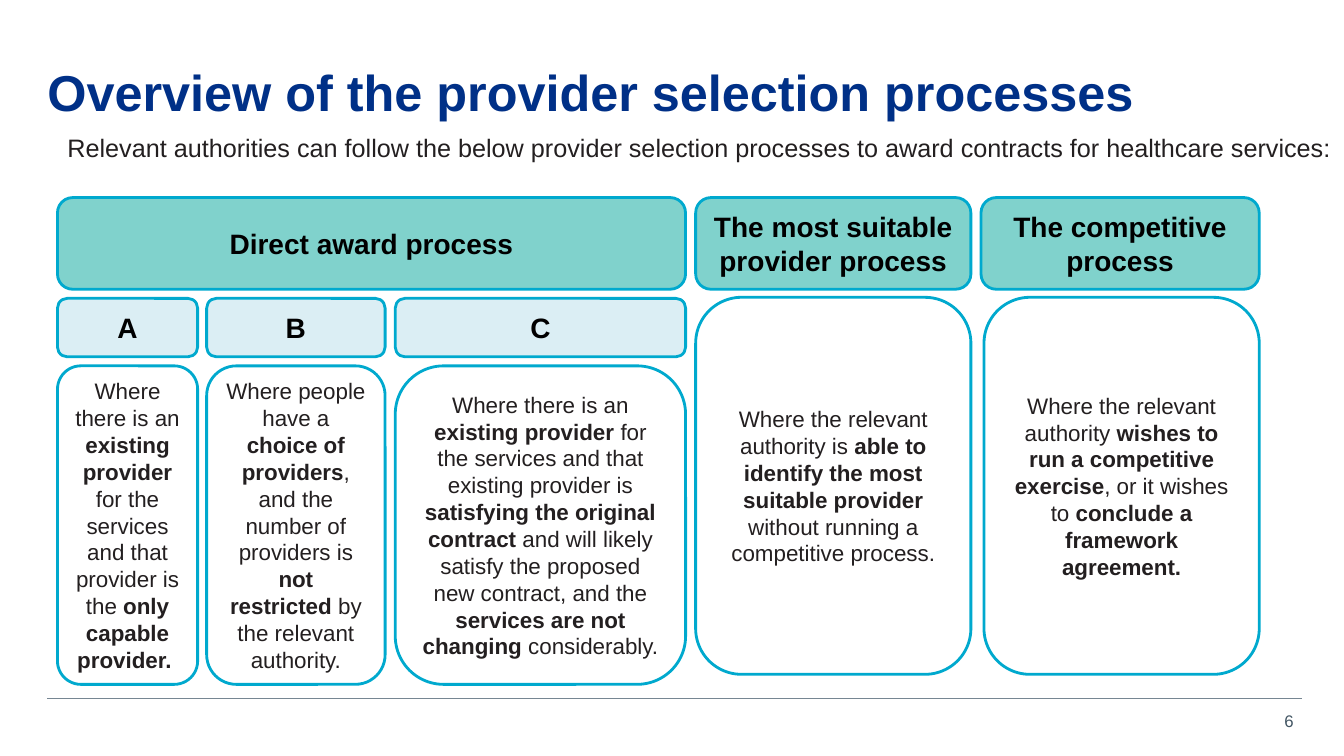
from lxml.etree import SubElement
from pptx import Presentation
from pptx.dml.color import RGBColor
from pptx.enum.shapes import MSO_CONNECTOR, MSO_SHAPE
from pptx.enum.text import MSO_ANCHOR, PP_ALIGN
from pptx.oxml.ns import qn
from pptx.util import Pt

PX = 9144  # 100 px to the inch
COLORS = {
    "title": "003087", "body": "231F20", "heading": "000000", "number": "425563",
    "rule": "768692", "outline": "00A9CE", "process": "80D2CC", "option": "DBEEF4",
    "panel": "FFFFFF",
}


def rgb(name):
    return RGBColor.from_string(COLORS[name])


def write(sp, text, size, color, bold=False, align=PP_ALIGN.LEFT, anchor=MSO_ANCHOR.TOP):
    """Fill a shape with one paragraph; parts between ** marks are bold."""
    tf = sp.text_frame
    tf.word_wrap = True
    tf.vertical_anchor = anchor
    p = tf.paragraphs[0]
    p.alignment = align
    p.font.name = "Arial"
    p.font.size = Pt(size)
    p.font.color.rgb = rgb(color)
    p.font.bold = bold
    for i, part in enumerate(text.split("**")):
        if part:
            r = p.add_run()
            r.text = part
            if i % 2:
                r.font.bold = True
    return tf


prs = Presentation()
prs.slide_width, prs.slide_height = 1333 * PX, 750 * PX
s = prs.slides.add_slide(prs.slide_layouts[6])

# Footer
sp = s.shapes.add_textbox(1252 * PX, 700 * PX, 41 * PX, 30 * PX)
write(sp, "6", 12, "number", align=PP_ALIGN.RIGHT).word_wrap = False
rule = s.shapes.add_connector(MSO_CONNECTOR.STRAIGHT, 47 * PX, 693 * PX, 1291 * PX, 693 * PX)
rule.line.color.rgb = rgb("rule")
rule.line.width = Pt(0.5)
SubElement(rule._element.spPr, qn("a:effectLst"))

# Title and introduction
sp = s.shapes.add_textbox(47 * PX, 47 * PX, 1247 * PX, 95 * PX)
tf = write(sp, "Overview of the provider selection processes", 36, "title",
           bold=True, anchor=MSO_ANCHOR.MIDDLE)
tf.margin_left = tf.margin_right = tf.margin_top = tf.margin_bottom = 0
tf.paragraphs[0].line_spacing = 0.9
sp = s.shapes.add_textbox(57 * PX, 126 * PX, 1276 * PX, 40 * PX)
write(sp, "Relevant authorities can follow the below provider selection processes "
      "to award contracts for healthcare services:", 18, "body")

# Rows of boxes: fill, top, height, text size, text colour, bold, (left, width, text)
rows = [
    ("process", 196, 91, 20, "heading", True, [
        (57, 623, "Direct award process"),
        (690, 273, "The most suitable provider process"),
        (973, 276, "The competitive process"),
    ]),
    ("option", 296, 58, 20, "heading", True, [
        (57, 139, "A"),
        (205, 177, "B"),
        (392, 288, "C"),
    ]),
    ("panel", 363, 316, 16, "body", False, [
        (57, 139, "Where there is an **existing provider **for the services and that "
                  "provider is the **only capable provider. **"),
        (205, 177, "Where people have a **choice of providers**, and the number of "
                   "providers is **not restricted **by the relevant authority."),
        (392, 288, "Where there is an **existing provider **for the services and that "
                   "existing provider is **satisfying the original contract **"
                   "and will likely satisfy the proposed new contract, and the "
                   "**services are not changing **considerably."),
    ]),
    ("panel", 295, 374, 16, "body", False, [
        (690, 273, "Where the relevant authority is **able to identify the most suitable "
                   "provider** without running a competitive process."),
        (976, 273, "Where the relevant authority **wishes to run a competitive exercise**, "
                   "or it wishes to **conclude a framework agreement.**"),
    ]),
]
for fill, top, height, size, color, bold, boxes in rows:
    for left, width, text in boxes:
        sp = s.shapes.add_shape(MSO_SHAPE.ROUNDED_RECTANGLE,
                                left * PX, top * PX, width * PX, height * PX)
        sp.shadow.inherit = False
        sp.fill.solid()
        sp.fill.fore_color.rgb = rgb(fill)
        sp.line.color.rgb = rgb("outline")
        sp.line.width = Pt(2)
        write(sp, text, size, color, bold, PP_ALIGN.CENTER, MSO_ANCHOR.MIDDLE)

prs.save("out.pptx")
